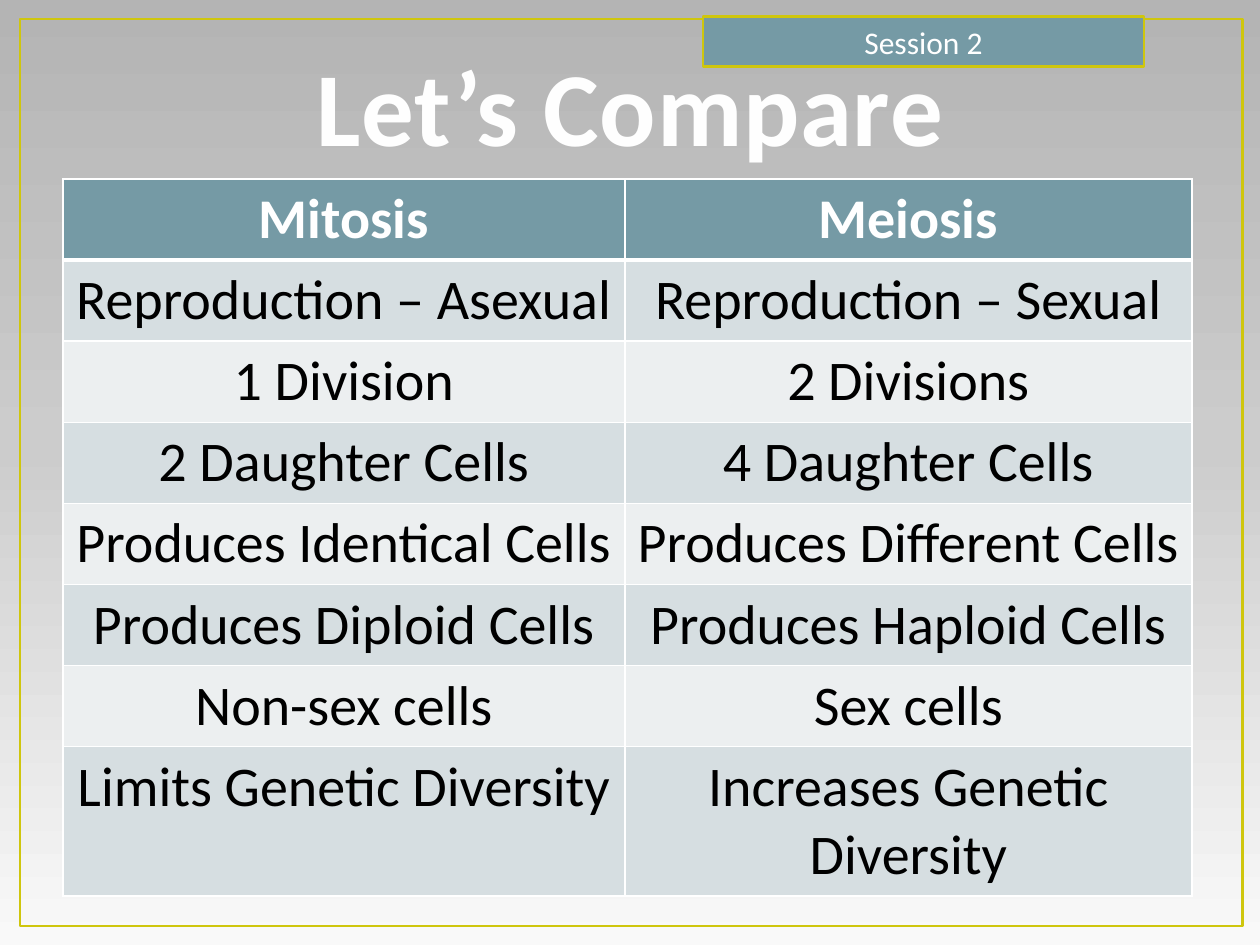
from dataclasses import dataclass

from lxml import etree
from pptx import Presentation
from pptx.dml.color import RGBColor
from pptx.enum.shapes import MSO_SHAPE
from pptx.enum.text import MSO_ANCHOR, PP_ALIGN
from pptx.oxml import parse_xml
from pptx.oxml.ns import nsdecls, qn
from pptx.util import Inches, Pt

RECT = MSO_SHAPE.RECTANGLE
CENTER = PP_ALIGN.CENTER
BOTTOM, MIDDLE = MSO_ANCHOR.BOTTOM, MSO_ANCHOR.MIDDLE


@dataclass(frozen=True)
class Theme:
    font: str = "Calibri"
    title_size: int = 60
    table_size: int = 32
    label_size: int = 18
    title: str = "FEFEFE"
    title_outline: str = "384F55"
    white: str = "FFFFFF"
    black: str = "000000"
    accent: str = "759AA5"
    gold: str = "CFC60D"
    bands: tuple = ("D6DEE1", "ECEFF0")
    background: tuple = ((0, "F9F9F9"), (53, "CCCCCC"), (100, "B4B4B4"))


@dataclass(frozen=True)
class Comparison:
    mitosis: str
    meiosis: str


THEME = Theme()
ROWS = [
    Comparison("Mitosis", "Meiosis"),
    Comparison("Reproduction – Asexual", "Reproduction – Sexual"),
    Comparison("1 Division", "2 Divisions"),
    Comparison("2 Daughter Cells", "4 Daughter Cells"),
    Comparison("Produces Identical Cells", "Produces Different Cells"),
    Comparison("Produces Diploid Cells", "Produces Haploid Cells"),
    Comparison("Non-sex cells", "Sex cells"),
    Comparison("Limits Genetic Diversity", "Increases Genetic Diversity"),
]
COLUMN_WIDTHS = (4.46, 4.5)
ROW_HEIGHT, LAST_ROW_HEIGHT = 0.64, 1.18


def write_text(tf, text: str, *, size: int, color: str, bold: bool = False):
    p = tf.paragraphs[0]
    p.alignment = CENTER
    r = p.add_run()
    r.text = text
    r.font.name = THEME.font
    r.font.size = Pt(size)
    r.font.bold = bold
    r.font.color.rgb = RGBColor.from_string(color)
    return r


def solid_line(tag: str, color: str, width: float):
    return parse_xml(
        f'<a:{tag} {nsdecls("a")} w="{Pt(width)}"><a:solidFill>'
        f'<a:srgbClr val="{color}"/></a:solidFill></a:{tag}>'
    )


def paint_background(s) -> None:
    """Fill the slide with the theme's gradient, running from bottom to top."""
    fill = s.background.fill
    fill.gradient()
    fill.gradient_angle = 90
    stops = s._element.xpath(".//p:bg//a:gsLst")[0]
    for stop in list(stops):
        stops.remove(stop)
    for position, color in THEME.background:
        gs = etree.SubElement(stops, qn("a:gs"), pos=str(position * 1000))
        etree.SubElement(gs, qn("a:srgbClr"), val=color)


def add_box(s, left: float, top: float, width: float, height: float, fill: str = ""):
    """Add a gold-edged rectangle, hollow unless a fill is given."""
    sp = s.shapes.add_shape(RECT, Inches(left), Inches(top), Inches(width), Inches(height))
    sp.shadow.inherit = False
    sp.line.color.rgb = RGBColor.from_string(THEME.gold)
    sp.line.width = Pt(1.5)
    if fill:
        sp.fill.solid()
        sp.fill.fore_color.rgb = RGBColor.from_string(fill)
    else:
        sp.fill.background()
    return sp


def format_title(s) -> None:
    sp = s.shapes.title
    sp.left, sp.top, sp.width, sp.height = Inches(0.5), Inches(0.13), Inches(9), Inches(1.25)
    sp.text_frame.vertical_anchor = BOTTOM
    r = write_text(sp.text_frame, "Let’s Compare", size=THEME.title_size,
                   color=THEME.title, bold=True)
    rPr = r.font._element
    rPr.set("spc", "50")
    rPr.insert(0, solid_line("ln", THEME.title_outline, 1.05))


def format_cell(cell, text: str, row: int) -> None:
    header = row == 0
    tcPr = cell._tc.get_or_add_tcPr()
    widths = {"lnL": 1, "lnR": 1, "lnT": 3 if row == 1 else 1, "lnB": 3 if header else 1}
    for tag, width in widths.items():
        tcPr.append(solid_line(tag, THEME.white, width))
    fill = THEME.accent if header else THEME.bands[(row - 1) % 2]
    cell.fill.solid()
    cell.fill.fore_color.rgb = RGBColor.from_string(fill)
    write_text(cell.text_frame, text, size=THEME.table_size,
               color=THEME.white if header else THEME.black, bold=header)


def add_comparison_table(s) -> None:
    heights = [ROW_HEIGHT] * (len(ROWS) - 1) + [LAST_ROW_HEIGHT]
    table = s.shapes.add_table(
        len(ROWS), len(COLUMN_WIDTHS), Inches(0.5), Inches(1.42),
        Inches(sum(COLUMN_WIDTHS)), Inches(sum(heights)),
    ).table
    for column, width in zip(table.columns, COLUMN_WIDTHS):
        column.width = Inches(width)
    for i, (row, height) in enumerate(zip(ROWS, heights)):
        table.rows[i].height = Inches(height)
        for j, text in enumerate((row.mitosis, row.meiosis)):
            format_cell(table.cell(i, j), text, i)


def main() -> None:
    prs = Presentation()
    prs.slide_width, prs.slide_height = Inches(10), Inches(7.5)
    s = prs.slides.add_slide(prs.slide_layouts[5])
    paint_background(s)
    add_box(s, 0.16, 0.15, 9.7, 7.2)
    add_comparison_table(s)
    format_title(s)
    label = add_box(s, 5.58, 0.13, 3.5, 0.4, THEME.accent)
    label.text_frame.vertical_anchor = MIDDLE
    write_text(label.text_frame, "Session 2", size=THEME.label_size, color=THEME.white)
    prs.save("out.pptx")


if __name__ == "__main__":
    main()
